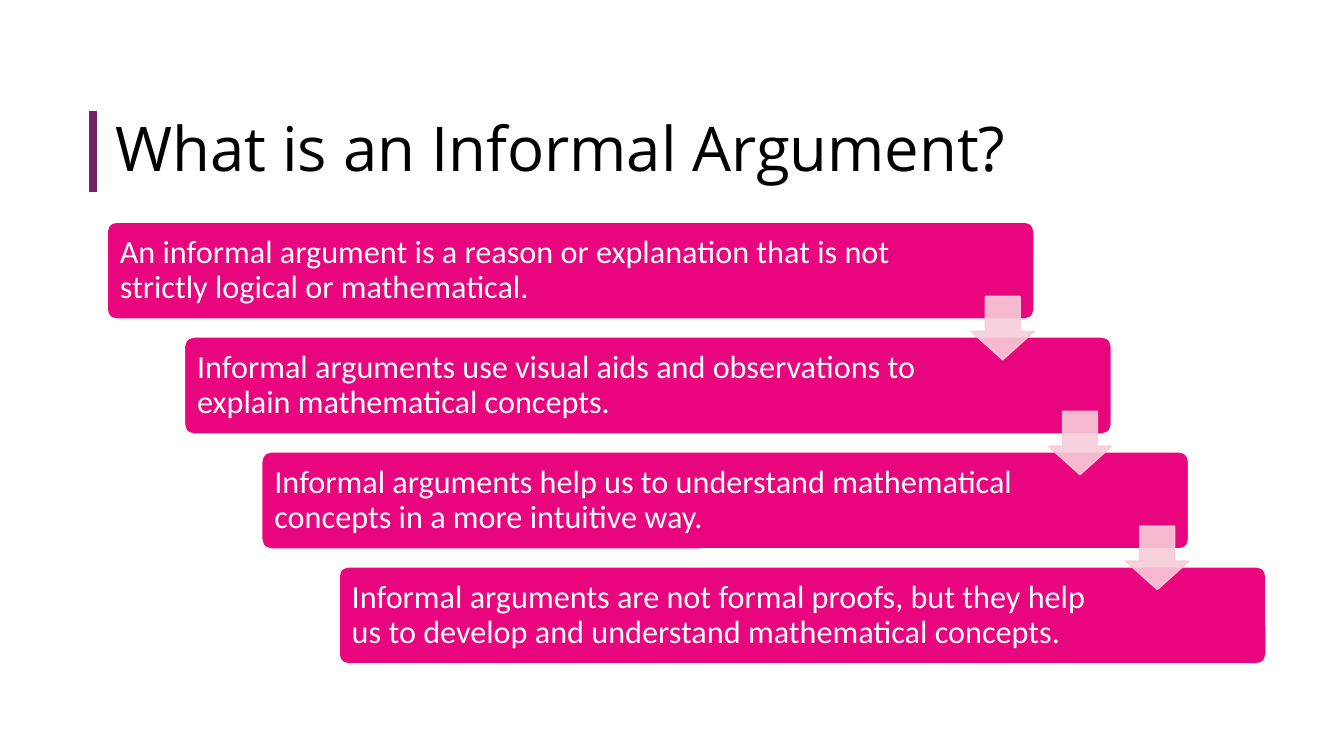
from lxml import etree
from pptx import Presentation
from pptx.dml.color import RGBColor
from pptx.enum.shapes import MSO_CONNECTOR, MSO_SHAPE
from pptx.enum.text import MSO_ANCHOR
from pptx.oxml.ns import qn
from pptx.util import Inches, Pt

STRAIGHT = MSO_CONNECTOR.STRAIGHT
ROUNDED = MSO_SHAPE.ROUNDED_RECTANGLE
DOWN_ARROW = MSO_SHAPE.DOWN_ARROW
MIDDLE = MSO_ANCHOR.MIDDLE

BLACK = RGBColor(0x00, 0x00, 0x00)
WHITE = RGBColor(0xFF, 0xFF, 0xFF)
PURPLE = RGBColor(0x72, 0x22, 0x62)
PINK = RGBColor(0xE9, 0x05, 0x7E)
PALE_PINK = RGBColor(0xF7, 0xCC, 0xD8)

# Staircase measures, in inches
CARD_WIDTH, CARD_HEIGHT = 9.2, 0.97
CARD_PADDING = 0.03
ARROW_SIZE = 0.63
ARROW_DROP = 0.74

# Each step: its text and the width left for that text
STEPS = [
    ("An informal argument is a reason or explanation that is not "
     "strictly logical or mathematical.", 8.08),
    ("Informal arguments use visual aids and observations to "
     "explain mathematical concepts.", 7.75),
    ("Informal arguments help us to understand mathematical "
     "concepts in a more intuitive way.", 7.75),
    ("Informal arguments are not formal proofs, but they help "
     "us to develop and understand mathematical concepts.", 7.75),
]


def add_text(page, box, text, font, size, color):
    label = page.shapes.add_textbox(*map(Inches, box))
    frame = label.text_frame
    frame.word_wrap = True
    frame.vertical_anchor = MIDDLE
    frame.margin_left = frame.margin_right = Inches(0.1)
    frame.margin_top = frame.margin_bottom = Inches(0.1)
    para = frame.paragraphs[0]
    para.line_spacing = 0.9
    span = para.add_run()
    span.text = text
    span.font.name = font
    span.font.size = Pt(size)
    span.font.color.rgb = color


def add_block(page, preset, box, adjustments, fill, line, line_width):
    block = page.shapes.add_shape(preset, *map(Inches, box))
    block.shadow.inherit = False
    for index, value in enumerate(adjustments):
        block.adjustments[index] = value
    block.fill.solid()
    block.fill.fore_color.rgb = fill
    block.line.color.rgb = line
    block.line.width = Pt(line_width)
    return block


def set_opacity(block, percent):
    """Apply one opacity to both the fill and the outline."""
    for color in block._element.spPr.iter(qn("a:srgbClr")):
        etree.SubElement(color, qn("a:alpha"), val=str(percent * 1000))


def add_heading(page, box, text):
    left, top, width, height = box
    bar = page.shapes.add_connector(
        STRAIGHT, Inches(left), Inches(top), Inches(left), Inches(top + height))
    bar.line.color.rgb = PURPLE
    bar.line.width = Pt(6)
    etree.SubElement(bar._element.spPr, qn("a:effectLst"))
    text_box = (left + 0.13, top, width - 0.13, height)
    add_text(page, text_box, text, "Open Sans", 44, BLACK)


def add_staircase(page, box, steps):
    left, top, width, height = box
    step_right = (width - CARD_WIDTH) / (len(steps) - 1)
    step_down = (height - CARD_HEIGHT) / (len(steps) - 1)
    corners = [(left + index * step_right, top + index * step_down)
               for index in range(len(steps))]

    # Cards with their text
    for (x, y), (text, text_width) in zip(corners, steps):
        add_block(page, ROUNDED, (x, y, CARD_WIDTH, CARD_HEIGHT),
                  [0.1], PINK, WHITE, 1.5)
        text_box = (x + CARD_PADDING, y + CARD_PADDING,
                    text_width, CARD_HEIGHT - 2 * CARD_PADDING)
        add_text(page, text_box, text, "Calibri", 23, WHITE)

    # Arrows from each card down to the next
    for x, y in corners[:-1]:
        arrow_box = (x + CARD_WIDTH - ARROW_SIZE, y + ARROW_DROP,
                     ARROW_SIZE, ARROW_SIZE)
        arrow = add_block(page, DOWN_ARROW, arrow_box,
                          [0.55, 0.45], PALE_PINK, PALE_PINK, 1)
        set_opacity(arrow, 90)


def main():
    deck = Presentation()
    deck.slide_width, deck.slide_height = Inches(13.33), Inches(7.5)
    page = deck.slides.add_slide(deck.slide_layouts[6])
    add_heading(page, (0.92, 1.1, 11.63, 0.8), "What is an Informal Argument?")
    add_staircase(page, (1.06, 2.2, 11.5, 4.39), STEPS)
    deck.save("out.pptx")


if __name__ == "__main__":
    main()
